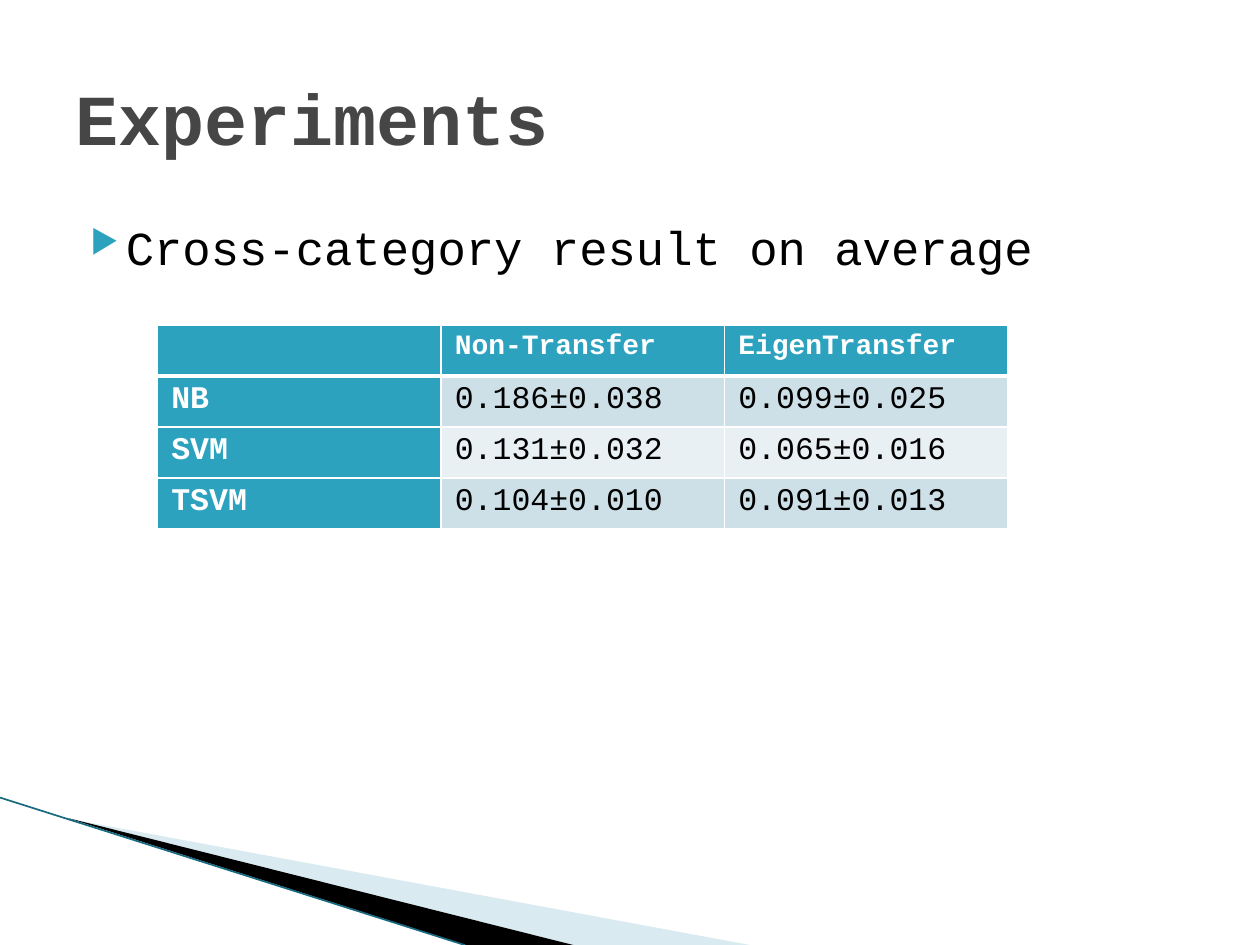
import dataclasses

import pptx
import pptx.dml.color
import pptx.enum.text
import pptx.enum.shapes
import pptx.oxml
import pptx.oxml.ns
import pptx.util


@dataclasses.dataclass(frozen=True)
class Theme:
    font: str = "Courier New"
    title: str = "464646"
    ink: str = "000000"
    paper: str = "FFFFFF"
    accent: str = "2DA2BF"
    edge: str = "16697F"
    pale: str = "A0CBDC"
    bands: tuple = ("CDE0E8", "E8F0F4")
    title_size: float = 41
    bullet_size: float = 27
    header_size: float = 16
    cell_size: float = 18


theme = Theme()
rgb = pptx.dml.color.RGBColor.from_string
Pt = pptx.util.Pt

deck = pptx.Presentation()
deck.slide_width = pptx.util.Inches(10)
deck.slide_height = pptx.util.Inches(7.5)
slide = deck.slides.add_slide(deck.slide_layouts[6])

# A grid of 40 columns by 30 rows
COLUMN = deck.slide_width // 40
ROW = deck.slide_height // 30


def xml(markup):
    namespace = pptx.oxml.ns.nsdecls("a")
    return pptx.oxml.parse_xml(markup.replace("/>", f" {namespace}/>", 1)
                               if markup.endswith("/>") and markup.count("<") == 1
                               else markup.replace(">", f" {namespace}>", 1))


def style(paragraph, size, color, bold=False):
    for run in paragraph.runs:
        run.font.name = theme.font
        run.font.size = Pt(size)
        run.font.bold = bold
        run.font.color.rgb = rgb(color)


# Corner wedges
wedges = [
    ([(2.2, 26), (23.8, 30), (18.2, 30)], theme.pale, 40),
    ([(2.12, 25.96), (18.2, 30), (14.8, 30)], theme.ink, 100),
]
for corners, color, opacity in wedges:
    points = [(round(x * COLUMN), round(y * ROW)) for x, y in corners]
    outline = slide.shapes.build_freeform(*points[0])
    outline.add_line_segments(points[1:], close=True)
    wedge = outline.convert_to_shape()
    wedge.shadow.inherit = False
    wedge.fill.solid()
    wedge.fill.fore_color.rgb = rgb(color)
    wedge.line.fill.background()
    if opacity < 100:
        color_node = wedge.fill._xPr.find(".//" + pptx.oxml.ns.qn("a:srgbClr"))
        color_node.append(xml(f'<a:alpha val="{opacity * 1000}"/>'))

edge = slide.shapes.add_connector(
    pptx.enum.shapes.MSO_CONNECTOR.STRAIGHT,
    0, round(25.32 * ROW), round(14.75 * COLUMN), 30 * ROW)
edge.line.color.rgb = rgb(theme.edge)
edge.line.width = Pt(0.95)
edge._element.spPr.append(xml("<a:effectLst/>"))

# Bullet
body = slide.shapes.add_textbox(
    2 * COLUMN, round(6.48 * ROW), 36 * COLUMN, round(19.8 * ROW)).text_frame
body.word_wrap = True
body.margin_top = pptx.util.Inches(0.11)
finding = body.paragraphs[0]
finding.text = "Cross-category result on average"
properties = finding._p.get_or_add_pPr()
properties.set("marL", str(pptx.util.Inches(0.4)))
properties.set("indent", str(pptx.util.Inches(-0.28)))
for markup in (f'<a:buClr><a:srgbClr val="{theme.accent}"/></a:buClr>',
               '<a:buSzPct val="68000"/>',
               '<a:buChar char="▶"/>'):
    properties.append(xml(markup))
style(finding, theme.bullet_size, theme.ink)

# Title
heading = slide.shapes.add_textbox(
    2 * COLUMN, round(1.2 * ROW), 36 * COLUMN, 5 * ROW).text_frame
heading.word_wrap = True
heading.vertical_anchor = pptx.enum.text.MSO_ANCHOR.MIDDLE
heading.text = "Experiments"
style(heading.paragraphs[0], theme.title_size, theme.title, bold=True)

# Results table
results = [
    ("", "Non-Transfer", "EigenTransfer"),
    ("NB", "0.186±0.038", "0.099±0.025"),
    ("SVM", "0.131±0.032", "0.065±0.016"),
    ("TSVM", "0.104±0.010", "0.091±0.013"),
]
table = slide.shapes.add_table(
    len(results), len(results[0]), 5 * COLUMN, round(10.32 * ROW),
    27 * COLUMN, round(6.48 * ROW)).table
for r, record in enumerate(results):
    for c, value in enumerate(record):
        cell = table.cell(r, c)
        label = r == 0 or c == 0
        cell.text = value
        cell.margin_left = cell.margin_right = pptx.util.Inches(0.11)
        style(cell.text_frame.paragraphs[0],
              theme.header_size if r == 0 else theme.cell_size,
              theme.paper if label else theme.ink, bold=label)
        thick_side = {0: "B", 1: "T"}.get(r)
        for side in "LRTB":
            width = Pt(3 if side == thick_side else 1)
            cell._tc.get_or_add_tcPr().append(xml(
                f'<a:ln{side} w="{width}"><a:solidFill>'
                f'<a:srgbClr val="{theme.paper}"/></a:solidFill></a:ln{side}>'))
        cell.fill.solid()
        cell.fill.fore_color.rgb = rgb(theme.accent if label else theme.bands[(r - 1) % 2])

deck.save("out.pptx")
